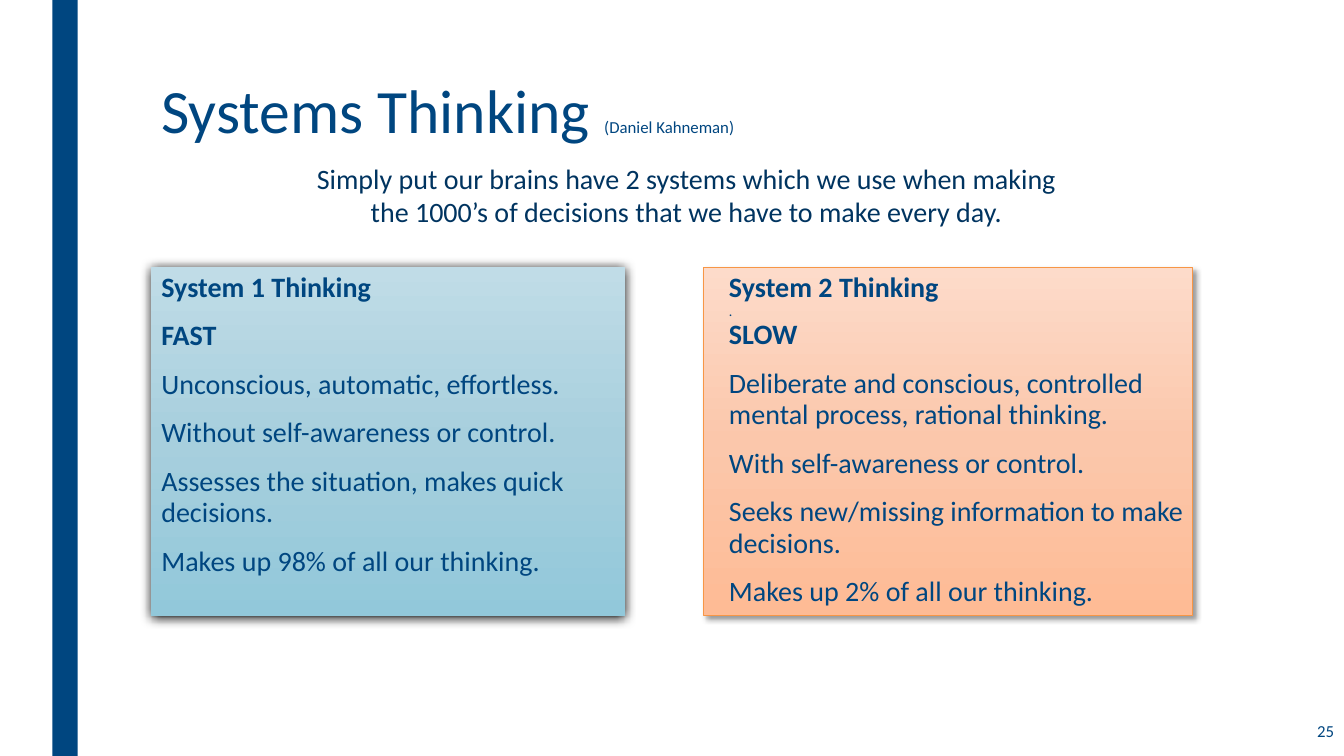
from dataclasses import dataclass
from lxml import etree
from pptx import Presentation
from pptx.dml.color import RGBColor
from pptx.enum.shapes import MSO_SHAPE
from pptx.enum.text import MSO_ANCHOR, MSO_AUTO_SIZE, PP_ALIGN
from pptx.oxml import parse_xml
from pptx.oxml.ns import nsdecls, qn
from pptx.util import Inches, Pt


@dataclass(frozen=True)
class Theme:
    font: str = "Calibri"
    blue: str = "004680"
    navy: str = "003460"
    orange: str = "F79646"
    fast_shades: tuple = ("C0DCE7", "A7CFDD", "92C8DA")
    slow_shades: tuple = ("FDDBCA", "FBC7AB", "FEBB95")
    title: int = 44
    body: int = 20
    small: int = 12
    tiny: int = 10


THEME = Theme()

# Content: a paragraph is a list of lines, a line is (text, size, bold)
TITLE, AUTHOR = "Systems Thinking ", "(Daniel Kahneman)"
INTRO = ("Simply put our brains have 2 systems which we use when making \v"
         "the 1000’s of decisions that we have to make every day. ")
PAGE = "25"
SYSTEMS = [
    {
        "headings": [[("System 1 Thinking", THEME.body, True)],
                     [("FAST", THEME.body, True)]],
        "points": ["Unconscious, automatic, effortless.",
                   "Without self-awareness or control.",
                   "Assesses the situation, makes quick decisions.",
                   "Makes up 98% of all our thinking."],
        "panel": (1.5, 2.65, 4.7, 3.46),
        "text": (1.5, 2.65, 4.22, 3.31),
        "shades": THEME.fast_shades,
        "edge": None,
        "shadow": (100, 8.5, 1, 90),  # opacity %, blur pt, distance pt, angle
    },
    {
        "headings": [[("System 2 Thinking ", THEME.body, True),
                      (".", THEME.tiny, False),
                      ("SLOW", THEME.body, True)]],
        "points": ["Deliberate and conscious, controlled mental process, rational thinking.",
                   "With self-awareness or control.",
                   "Seeks new/missing information to make decisions.",
                   "Makes up 2% of all our thinking."],
        "panel": (6.98, 2.65, 4.85, 3.46),
        "text": (7.13, 2.65, 4.86, 3.46),
        "shades": THEME.slow_shades,
        "edge": THEME.orange,
        "shadow": (40, 4, 3, 45),
    },
]


def style(font, size, color=THEME.blue, bold=False):
    font.name, font.size, font.bold = THEME.font, Pt(size), bold
    font.color.rgb = RGBColor.from_string(color)


def place(shape, box):
    shape.left, shape.top, shape.width, shape.height = map(Inches, box)


def add_rect(slide, box):
    rect = slide.shapes.add_shape(MSO_SHAPE.RECTANGLE, *map(Inches, box))
    rect.shadow.inherit = False
    rect.line.fill.background()
    return rect


def add_panel(slide, system):
    panel = add_rect(slide, system["panel"])
    if system["edge"]:
        panel.line.color.rgb = RGBColor.from_string(system["edge"])
        panel.line.width = Pt(0.5)
    properties = panel._element.spPr
    # Vertical three-stop gradient
    stops = "".join(f'<a:gs pos="{i * 50000}"><a:srgbClr val="{shade}"/></a:gs>'
                    for i, shade in enumerate(system["shades"]))
    properties.find(qn("a:prstGeom")).addnext(parse_xml(
        f'<a:gradFill {nsdecls("a")} rotWithShape="1"><a:gsLst>{stops}</a:gsLst>'
        '<a:lin ang="5400000" scaled="0"/></a:gradFill>'))
    # Outer shadow
    opacity, blur, distance, angle = system["shadow"]
    properties.find(qn("a:effectLst")).append(parse_xml(
        f'<a:outerShdw {nsdecls("a")} blurRad="{Pt(blur)}" dist="{Pt(distance)}" '
        f'dir="{angle * 60000}" rotWithShape="0"><a:srgbClr val="000000">'
        f'<a:alpha val="{opacity * 1000}"/></a:srgbClr></a:outerShdw>'))


def fill_body(body, system):
    place(body, system["text"])
    frame = body.text_frame
    frame.auto_size = MSO_AUTO_SIZE.NONE
    frame.vertical_anchor = MSO_ANCHOR.TOP
    paragraphs = system["headings"] + [[(point, THEME.body, False)]
                                       for point in system["points"]]
    for i, lines in enumerate(paragraphs):
        paragraph = frame.add_paragraph() if i else frame.paragraphs[0]
        layout = paragraph._p.get_or_add_pPr()
        layout.set("marL", "0")
        layout.set("indent", "0")
        etree.SubElement(layout, qn("a:buNone"))
        paragraph.line_spacing = 0.94
        paragraph.space_before = Pt(10 if i else 0)
        paragraph.space_after = Pt(2)
        for j, (text, size, bold) in enumerate(lines):
            if j:
                paragraph.add_line_break()
                line_break = paragraph._p.findall(qn("a:br"))[-1]
                etree.SubElement(line_break, qn("a:rPr")).set("sz", str(lines[j - 1][1] * 100))
            run = paragraph.add_run()
            run.text = text
            style(run.font, size, bold=bold)


def add_label(slide, box, text, size, color, align, anchor):
    label = slide.shapes.add_textbox(*map(Inches, box))
    frame = label.text_frame
    frame.word_wrap = True
    frame.vertical_anchor = anchor
    paragraph = frame.paragraphs[0]
    paragraph.text = text
    paragraph.alignment = align
    style(paragraph.font, size, color)


def main():
    deck = Presentation()
    deck.slide_width, deck.slide_height = Inches(13.33), Inches(7.5)
    slide = deck.slides.add_slide(deck.slide_layouts[3])
    title, *bodies = slide.placeholders

    # Side bar
    bar = add_rect(slide, (0.52, 0, 0.25, 7.5))
    bar.fill.solid()
    bar.fill.fore_color.rgb = RGBColor.from_string(THEME.blue)

    # Title with author
    place(title, (1.5, 0.75, 10.5, 1.62))
    title.text_frame.auto_size = MSO_AUTO_SIZE.NONE
    title.text_frame.vertical_anchor = MSO_ANCHOR.TOP
    heading = title.text_frame.paragraphs[0]
    heading.alignment = PP_ALIGN.LEFT
    heading.line_spacing = 0.89
    for text, size in ((TITLE, THEME.title), (AUTHOR, THEME.small)):
        run = heading.add_run()
        run.text = text
        style(run.font, size)

    # Panels, then their text in front
    for system in SYSTEMS:
        add_panel(slide, system)
    for body, system in zip(bodies, SYSTEMS):
        fill_body(body, system)
        slide.shapes._spTree.append(body._element)

    # Page number and introduction
    add_label(slide, (11.58, 7.03, 1.75, 0.44), PAGE, THEME.small, THEME.blue,
              PP_ALIGN.RIGHT, MSO_ANCHOR.MIDDLE)
    add_label(slide, (1.5, 1.55, 10.68, 0.77), INTRO, THEME.body, THEME.navy,
              PP_ALIGN.CENTER, MSO_ANCHOR.TOP)

    deck.save("out.pptx")


if __name__ == "__main__":
    main()
